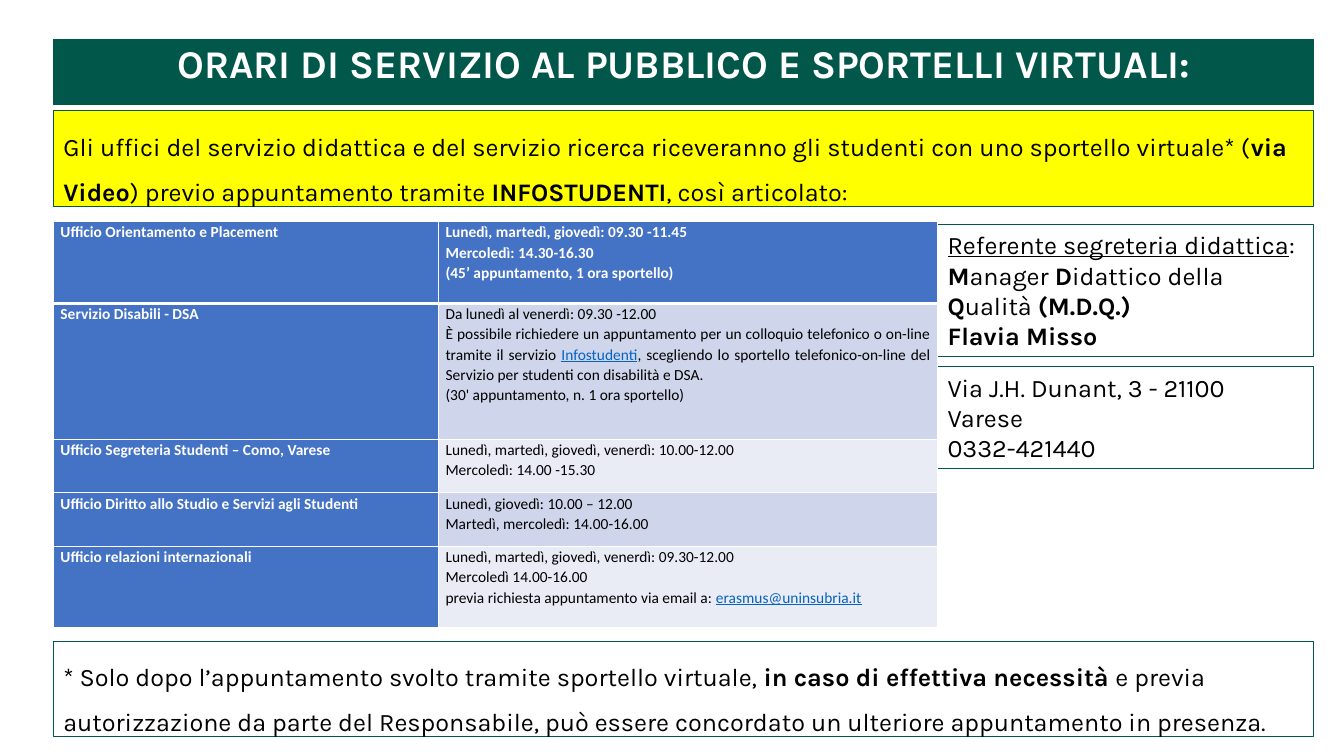
import lxml.etree
import pptx
import pptx.dml.color
import pptx.enum.shapes
import pptx.enum.text
import pptx.oxml.ns
import pptx.util

Inches = pptx.util.Inches
Pt = pptx.util.Pt
ALIGN = pptx.enum.text.PP_ALIGN

GREEN, YELLOW, WHITE, BLACK = "00574A", "FFFF00", "FFFFFF", "000000"
BLUE, LINK, BANDS = "4472C4", "0563C1", ("CFD5EA", "E9EBF5")
LEFT, WIDTH = 0.53, 12.5

INTRO = [[
    ("Gli uffici del servizio didattica e del servizio ricerca riceveranno gli studenti "
     "con uno sportello virtuale* (", ""),
    ("via Video", "b"), (") previo appuntamento tramite ", ""),
    ("INFOSTUDENTI", "b"), (", così articolato:", ""),
]]
FOOTNOTE = [[
    ("* Solo dopo l’appuntamento svolto tramite sportello virtuale, ", ""),
    ("in caso di effettiva necessità ", "b"),
    ("e previa autorizzazione da parte del Responsabile, può essere concordato "
     "un ulteriore appuntamento in presenza.", ""),
]]
CONTACT = [
    [("Referente segreteria didattica", "u"), (":", "")],
    [("M", "b"), ("anager ", ""), ("D", "b"), ("idattico della ", ""),
     ("Q", "b"), ("ualità ", ""), ("(M.D.Q.)", "b")],
    [("Flavia Misso", "b")],
]
ADDRESS = [[("Via J.H. Dunant, 3 - 21100 Varese", "")], [("0332-421440", "")]]

OFFICES = [
    (0.81, "Ufficio Orientamento e Placement", [
        [("Lunedì, martedì, giovedì: 09.30 -11.45", "b")],
        [("Mercoledì: 14.30-16.30", "b")],
        [("(45’ appuntamento, 1 ora sportello)", "b")],
    ]),
    (1.35, "Servizio Disabili - DSA", [
        [("Da lunedì al venerdì: 09.30 -12.00", "")],
        [("È possibile richiedere un appuntamento per un colloquio telefonico o on-line "
          "tramite il servizio ", ""),
         ("Infostudenti", "link"),
         (", scegliendo lo sportello telefonico-on-line del Servizio per studenti "
          "con disabilità e DSA.", "")],
        [("(30' appuntamento, n. 1 ora sportello)", "")],
    ]),
    (0.53, "Ufficio Segreteria Studenti – Como, Varese", [
        [("Lunedì, martedì, giovedì, venerdì: 10.00-12.00", "")],
        [("Mercoledì: 14.00 -15.30", "")],
    ]),
    (0.53, "Ufficio Diritto allo Studio e Servizi agli Studenti", [
        [("Lunedì, giovedì: 10.00 – 12.00", "")],
        [("Martedì, mercoledì: 14.00-16.00", "")],
    ]),
    (0.81, "Ufficio relazioni internazionali", [
        [("Lunedì, martedì, giovedì, venerdì: 09.30-12.00", "")],
        [("Mercoledì 14.00-16.00", "")],
        [("previa richiesta appuntamento via email a: ", ""),
         ("erasmus@uninsubria.it", "link")],
    ]),
]


def rgb(color):
    """Turn a hex string into a colour."""
    return pptx.dml.color.RGBColor.from_string(color)


def paint(fill, color):
    """Give a fill one solid colour."""
    fill.solid()
    fill.fore_color.rgb = rgb(color)


def write(tf, paragraphs, font, size, color, align=ALIGN.LEFT, spacing=1.0):
    """Write paragraphs of (text, style) runs into a text frame."""
    for i, runs in enumerate(paragraphs):
        p = tf.paragraphs[0] if i == 0 else tf.add_paragraph()
        p.alignment = align
        p.line_spacing = spacing
        p.space_before = Pt(0)
        for text, style in runs:
            r = p.add_run()
            r.text = text
            r.font.name = font
            r.font.size = Pt(size)
            r.font.bold = style == "b"
            r.font.underline = style in ("u", "link")
            r.font.color.rgb = rgb(LINK if style == "link" else color)


def frame(sp, fill=None):
    """Outline a shape in green and fill it if a colour is given."""
    if fill:
        paint(sp.fill, fill)
    else:
        sp.fill.background()
    sp.line.color.rgb = rgb(GREEN)
    sp.line.width = Pt(0.75)
    sp.text_frame.word_wrap = True
    sp.text_frame.vertical_anchor = pptx.enum.text.MSO_ANCHOR.TOP


def add_title(s, text):
    """Fill the title placeholder as a green band."""
    sp = s.shapes.title
    sp.left, sp.top = Inches(LEFT), Inches(0.39)
    sp.width, sp.height = Inches(WIDTH), Inches(0.65)
    frame(sp, GREEN)
    sp.text_frame.auto_size = pptx.enum.text.MSO_AUTO_SIZE.NONE
    write(sp.text_frame, [[(text, "b")]], "Karla", 28, WHITE, ALIGN.CENTER, 0.9)


def add_box(s, left, top, width, height, paragraphs, fill=None, spacing=1.0):
    """Add an outlined text box."""
    sp = s.shapes.add_textbox(Inches(left), Inches(top), Inches(width), Inches(height))
    frame(sp, fill)
    sp.text_frame.auto_size = pptx.enum.text.MSO_AUTO_SIZE.SHAPE_TO_FIT_TEXT
    write(sp.text_frame, paragraphs, "Karla", 18, BLACK, spacing=spacing)


def set_borders(cell, bottom):
    """Draw white borders around a cell."""
    tcPr = cell._tc.get_or_add_tcPr()
    qn = pptx.oxml.ns.qn
    for side, width in (("L", 1), ("R", 1), ("T", 1), ("B", bottom)):
        ln = lxml.etree.SubElement(tcPr, qn(f"a:ln{side}"), w=str(Pt(width)))
        solid = lxml.etree.SubElement(ln, qn("a:solidFill"))
        lxml.etree.SubElement(solid, qn("a:srgbClr"), val=WHITE)


def fill_cell(cell, paragraphs, fill, color, align, bottom):
    """Format one table cell and write its text."""
    set_borders(cell, bottom)
    paint(cell.fill, fill)
    cell.margin_left = cell.margin_right = Inches(0.07)
    cell.margin_top = cell.margin_bottom = Inches(0)
    write(cell.text_frame, paragraphs, "Calibri", 11, color, align, 1.07)


def add_timetable(s, left, top, widths):
    """Add the table of offices and opening hours."""
    height = sum(office[0] for office in OFFICES)
    table = s.shapes.add_table(len(OFFICES), 2, Inches(left), Inches(top),
                               Inches(sum(widths)), Inches(height)).table
    for column, width in zip(table.columns, widths):
        column.width = Inches(width)
    for i, (row_height, office, hours) in enumerate(OFFICES):
        table.rows[i].height = Inches(row_height)
        header = i == 0
        bottom = 3 if header else 1
        fill_cell(table.cell(i, 0), [[(office, "b")]], BLUE, WHITE, ALIGN.LEFT, bottom)
        fill_cell(table.cell(i, 1), hours,
                  BLUE if header else BANDS[(i - 1) % 2],
                  WHITE if header else BLACK,
                  ALIGN.LEFT if header else ALIGN.JUSTIFY, bottom)


def main():
    """Build the slide and save it."""
    prs = pptx.Presentation()
    prs.slide_width, prs.slide_height = Inches(13.33), Inches(7.5)
    s = prs.slides.add_slide(prs.slide_layouts[5])
    add_title(s, "ORARI DI SERVIZIO AL PUBBLICO E SPORTELLI VIRTUALI:")
    add_box(s, LEFT, 1.1, WIDTH, 0.95, INTRO, YELLOW, 1.5)
    add_box(s, LEFT, 6.36, WIDTH, 0.95, FOOTNOTE, spacing=1.5)
    add_box(s, 9.3, 2.23, 3.73, 1.31, CONTACT)
    add_box(s, 9.3, 3.64, 3.73, 1.01, ADDRESS)
    add_timetable(s, LEFT, 2.2, (3.82, 4.95))
    prs.save("out.pptx")


if __name__ == "__main__":
    main()
